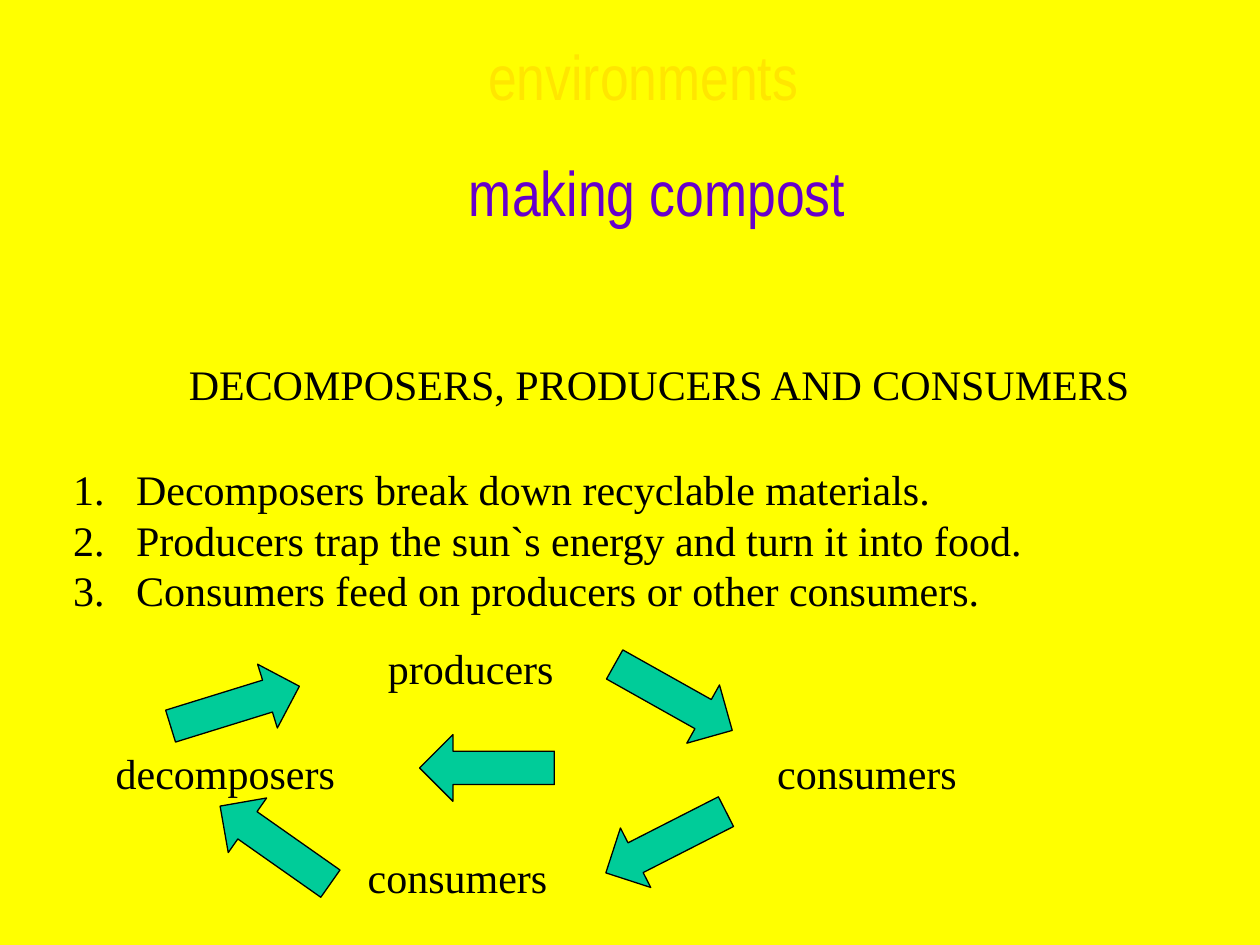
from dataclasses import dataclass
from typing import NamedTuple

from lxml.etree import SubElement
from pptx import Presentation
from pptx.dml.color import RGBColor
from pptx.enum.shapes import MSO_SHAPE as Shape
from pptx.enum.text import MSO_ANCHOR as Anchor, MSO_AUTO_SIZE as AutoSize, PP_ALIGN as Align
from pptx.oxml.ns import qn
from pptx.util import Inches, Pt

COLUMNS, ROWS = 100, 75
SLIDE_WIDTH, SLIDE_HEIGHT = Inches(10), Inches(7.5)


@dataclass(frozen=True)
class Theme:
    background: RGBColor = RGBColor.from_string("FFFF00")
    faint: RGBColor = RGBColor.from_string("FFE600")
    title: RGBColor = RGBColor.from_string("6600CC")
    ink: RGBColor = RGBColor.from_string("000000")
    arrow: RGBColor = RGBColor.from_string("00CC99")
    title_font: str = "Arial Narrow"
    body_font: str = "Times New Roman"
    title_size: Pt = Pt(36)
    body_size: Pt = Pt(24)
    body_line: Pt = Pt(28.8)
    outline: Pt = Pt(0.75)


THEME = Theme()


class Box(NamedTuple):
    left: float
    top: float
    width: float
    height: float

    def inside(self, left, top, width, height):
        return Box(self.left + left, self.top + top, width, height)

    def lengths(self):
        column, row = SLIDE_WIDTH / COLUMNS, SLIDE_HEIGHT / ROWS
        return (round(self.left * column), round(self.top * row),
                round(self.width * column), round(self.height * row))


def format_text(shape, font_name, size, color, alignment, line_spacing=None):
    frame = shape.text_frame
    frame.auto_size = AutoSize.NONE
    frame.vertical_anchor = Anchor.TOP
    for paragraph in frame.paragraphs:
        paragraph.alignment = alignment
        paragraph.space_before = Pt(0)
        paragraph.line_spacing = line_spacing
        for run in paragraph.runs:
            run.font.name = font_name
            run.font.size = size
            run.font.color.rgb = color


def place(shape, box):
    shape.left, shape.top, shape.width, shape.height = box.lengths()


def add_label(slide, box, text):
    label = slide.shapes.add_textbox(*box.lengths())
    label.text_frame.text = text
    label.text_frame.word_wrap = False
    format_text(label, THEME.body_font, THEME.body_size, THEME.ink, Align.LEFT, THEME.body_line)


def add_heading(slide, box):
    topic = slide.shapes.add_textbox(*box.inside(-1.1, 0, box.width, 7).lengths())
    title = slide.shapes.title
    place(title, box.inside(0, 9.2, box.width, 14.1))
    for shape, text, color in ((topic, "environments", THEME.faint),
                               (title, "making compost", THEME.title)):
        shape.text_frame.text = text
        shape.text_frame.word_wrap = False
        format_text(shape, THEME.title_font, THEME.title_size, color, Align.CENTER)


def add_definitions(slide, box):
    add_label(slide, box.inside(9.2, 0, 76.9, 5), "DECOMPOSERS, PRODUCERS AND CONSUMERS")
    body = slide.placeholders[1]
    place(body, box.inside(0, 8.3, box.width, 13))
    body.text_frame.text = "\n".join((
        "Decomposers break down recyclable materials.",
        "Producers trap the sun`s energy and turn it into food.",
        "Consumers feed on producers or other consumers.",
    ))
    format_text(body, THEME.body_font, THEME.body_size, THEME.ink, Align.LEFT, THEME.body_line)
    indent = Inches(0.5)
    for paragraph in body.text_frame.paragraphs:
        properties = paragraph._p.get_or_add_pPr()
        properties.set("marL", str(indent))
        properties.set("indent", str(-indent))
        SubElement(properties, qn("a:buFont"), typeface=THEME.body_font)
        SubElement(properties, qn("a:buAutoNum"), type="arabicPeriod")


def add_arrow(slide, box, kind, rotation):
    arrow = slide.shapes.add_shape(kind, *box.lengths())
    arrow.rotation = rotation
    arrow.shadow.inherit = False
    arrow.fill.solid()
    arrow.fill.fore_color.rgb = THEME.arrow
    arrow.line.color.rgb = THEME.ink
    arrow.line.width = THEME.outline


def add_cycle(slide, box):
    labels = (
        ("producers", 21.6, 0.5, 15.2),
        ("consumers", 52.5, 8.8, 16.3),
        ("consumers", 20, 17.1, 16.3),
        ("decomposers", 0, 8.8, 19.4),
    )
    for text, left, top, width in labels:
        add_label(slide, box.inside(left, top, width, 5), text)

    thickness, length = 5.3, 10.7
    arrows = (
        (Shape.DOWN_ARROW, 42.6, 0, 299.3),
        (Shape.DOWN_ARROW, 42, 11.5, 63),
        (Shape.UP_ARROW, 11, 11.7, 305.1),
        (Shape.UP_ARROW, 7.8, 0.7, 72.8),
    )
    for kind, left, top, rotation in arrows:
        add_arrow(slide, box.inside(left, top, thickness, length), kind, rotation)
    add_arrow(slide, box.inside(25.1, 8.3, length, thickness), Shape.LEFT_ARROW, 0)


def main():
    presentation = Presentation()
    presentation.slide_width, presentation.slide_height = SLIDE_WIDTH, SLIDE_HEIGHT
    slide = presentation.slides.add_slide(presentation.slide_layouts[1])
    slide.background.fill.solid()
    slide.background.fill.fore_color.rgb = THEME.background
    add_heading(slide, Box(35, 2.5, 34.3, 23.3))
    add_definitions(slide, Box(4.8, 28, 86.1, 21.3))
    add_cycle(slide, Box(8.2, 50, 68.8, 22.4))
    presentation.save("out.pptx")


if __name__ == "__main__":
    main()
